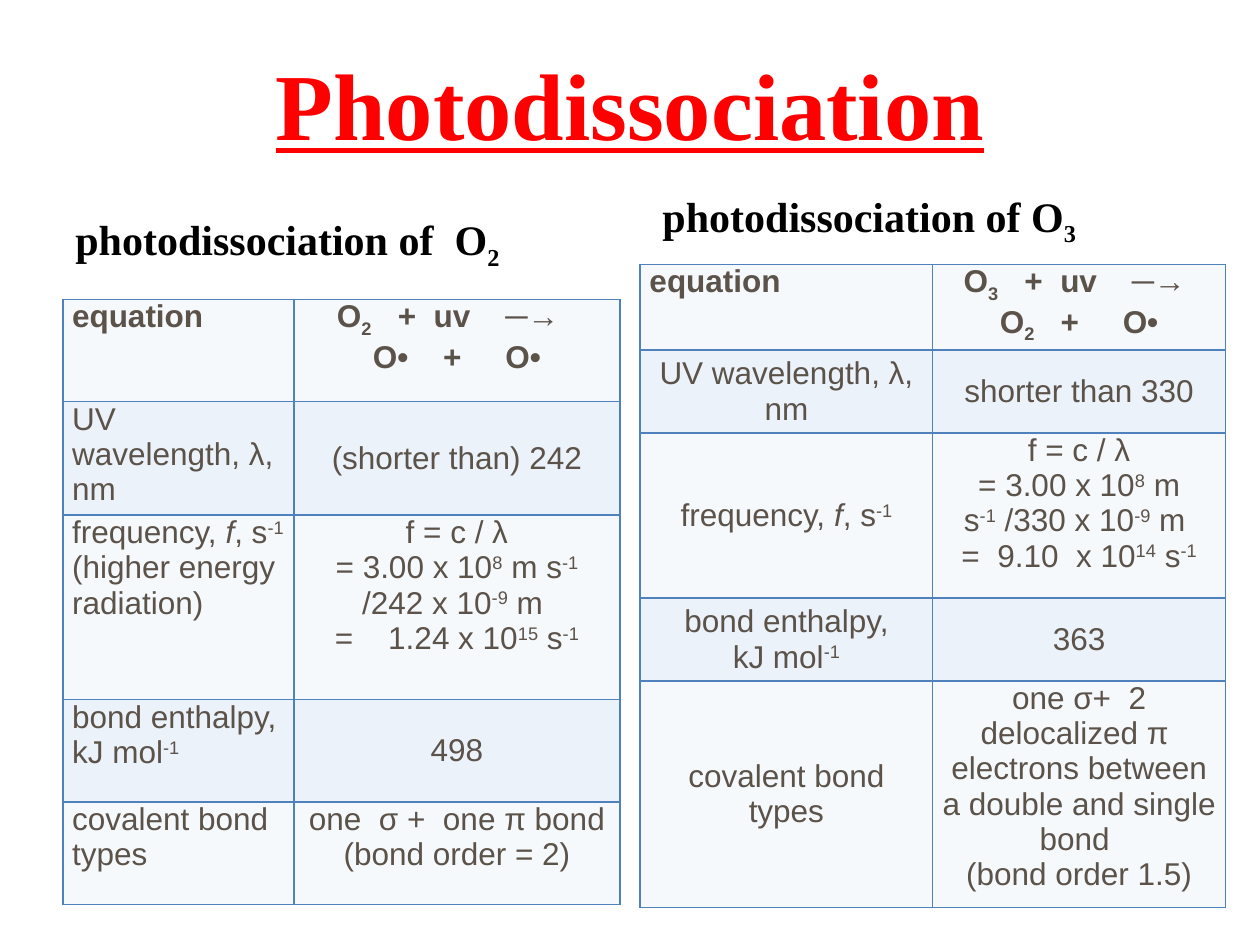
from dataclasses import dataclass

from lxml import etree
from pptx import Presentation
from pptx import util as u
from pptx.dml.color import RGBColor
from pptx.enum import text as t
from pptx.oxml import ns

RED = RGBColor(0xFF, 0x00, 0x00)
BLACK = RGBColor(0x00, 0x00, 0x00)
BROWN = RGBColor(0x5B, 0x52, 0x49)
BLUE = RGBColor(0x4F, 0x81, 0xBD)
BANDS = (RGBColor(0xF5, 0xF9, 0xFC), RGBColor(0xEB, 0xF2, 0xFA))

TITLE = {"size": u.Pt(54), "name": "Times New Roman", "bold": True, "underline": True}
HEAD = {"size": u.Pt(24), "name": "Times New Roman", "bold": True}
BODY = {"size": u.Pt(18), "name": "Arial", "bold": False}
BOLD = {**BODY, "bold": True}

SHIFTS = {"_": "-25000", "^": "30000"}
MARKS = "_^~"
LEFT, MID = t.PP_ALIGN.LEFT, t.PP_ALIGN.CENTER
TOP, CENTER, BASE = t.MSO_ANCHOR.TOP, t.MSO_ANCHOR.MIDDLE, t.MSO_ANCHOR.BOTTOM


@dataclass(frozen=True)
class Label:
    text: str
    box: tuple[float, float, float, float]
    form: dict
    color: RGBColor
    align: t.PP_ALIGN
    anchor: t.MSO_ANCHOR


@dataclass(frozen=True)
class Cell:
    lines: tuple[str, ...]
    align: t.PP_ALIGN = MID
    anchor: t.MSO_ANCHOR = TOP


@dataclass(frozen=True)
class Grid:
    left: float
    top: float
    inset: float
    cols: tuple[float, ...]
    rows: tuple[float, ...]
    cells: tuple[tuple[Cell, Cell], ...]


def side(*lines: str) -> Cell:
    return Cell(lines, LEFT)


def mid(*lines: str) -> Cell:
    return Cell(lines, MID, CENTER)


def top(*lines: str) -> Cell:
    return Cell(lines)


LABELS = (
    Label("Photodissociation", (36, 13.5, 648, 90), TITLE, RED, MID, CENTER),
    Label("photodissociation of  O|_2", (36, 108, 318.25, 50.4), HEAD, BLACK, LEFT, BASE),
    Label("photodissociation of O|_3", (371.5, 94.5, 324, 50.4), HEAD, BLACK, LEFT, BASE),
)

GRIDS = (
    Grid(36, 171, 5.2, (132, 186.25), (58.5, 64.5, 105.5, 58.5, 58.5), (
        (side("equation"), top("O|_2|   +  uv    ─→  ", "O•    +     O•")),
        (side("UV wavelength, λ, nm"), mid("(shorter than) 242")),
        (side("frequency, |~f|, s|^-1", "(higher energy radiation)"),
         top("f = c / λ", "= 3.00 x 10|^8| m s|^-1| /242 x 10|^-9| m ",
             "=    1.24 x 10|^15| s|^-1")),
        (side("bond enthalpy,", "kJ mol|^-1"), mid("498")),
        (side("covalent bond types"), top("one  σ +  one π bond", "(bond order = 2)")),
    )),
    Grid(365.75, 151, 5.4, (167.25, 167.25), (47.25, 47.25, 94.5, 47.25, 129.5), (
        (side("equation"), top("O|_3|   +  uv    ─→  O|_2|   +     O•")),
        (mid("UV wavelength, λ, nm"), mid("shorter than 330")),
        (mid("frequency, |~f|, s|^-1"),
         top("f = c / λ", "= 3.00 x 10|^8| m s|^-1| /330 x 10|^-9| m ",
             "=  9.10  x 10|^14| s|^-1")),
        (mid("bond enthalpy,", "kJ mol|^-1"), mid("363")),
        (mid("covalent bond types"),
         top("one σ+  2 delocalized π  electrons between a double and single bond ",
             "(bond order 1.5)")),
    )),
)


def write(frame, lines: tuple[str, ...], form: dict, color: RGBColor, align) -> None:
    for i, line in enumerate(lines):
        para = frame.add_paragraph() if i else frame.paragraphs[0]
        para.alignment = align
        for part in line.split("|"):
            mark = part[0] if part[0] in MARKS else ""
            run = para.add_run()
            run.text = part[len(mark):]
            for key, value in form.items():
                setattr(run.font, key, value)
            run.font.color.rgb = color
            if mark == "~":
                run.font.italic = True
            elif mark:
                run._r.get_or_add_rPr().set("baseline", SHIFTS[mark])


def edge(cell) -> None:
    props = cell._tc.get_or_add_tcPr()
    for name in ("a:lnL", "a:lnR", "a:lnT", "a:lnB"):
        line = etree.SubElement(props, ns.qn(name), w=str(u.Pt(1)))
        fill = etree.SubElement(line, ns.qn("a:solidFill"))
        etree.SubElement(fill, ns.qn("a:srgbClr"), val=str(BLUE))


def draw_label(slide, label: Label) -> None:
    frame = slide.shapes.add_textbox(*map(u.Pt, label.box)).text_frame
    frame.word_wrap = True
    frame.vertical_anchor = label.anchor
    write(frame, (label.text,), label.form, label.color, label.align)


def draw_grid(slide, grid: Grid) -> None:
    box = (grid.left, grid.top, sum(grid.cols), sum(grid.rows))
    table = slide.shapes.add_table(
        len(grid.rows), len(grid.cols), *map(u.Pt, box)).table
    table.first_row = table.horz_banding = False
    for col, width in zip(table.columns, grid.cols):
        col.width = u.Pt(width)
    for r, (row, height) in enumerate(zip(table.rows, grid.rows)):
        row.height = u.Pt(height)
        for cell, data in zip(row.cells, grid.cells[r]):
            form = {"margin_left": u.Pt(grid.inset), "margin_right": u.Pt(grid.inset),
                    "margin_top": 0, "margin_bottom": 0, "vertical_anchor": data.anchor}
            for key, value in form.items():
                setattr(cell, key, value)
            edge(cell)
            cell.fill.solid()
            cell.fill.fore_color.rgb = BANDS[r % 2]
            write(cell.text_frame, data.lines, BODY if r else BOLD, BROWN, data.align)


def main() -> None:
    deck = Presentation()
    deck.slide_width, deck.slide_height = u.Pt(720), u.Pt(540)
    slide = deck.slides.add_slide(deck.slide_layouts[6])
    for label in LABELS:
        draw_label(slide, label)
    for grid in GRIDS:
        draw_grid(slide, grid)
    deck.save("out.pptx")


if __name__ == "__main__":
    main()
